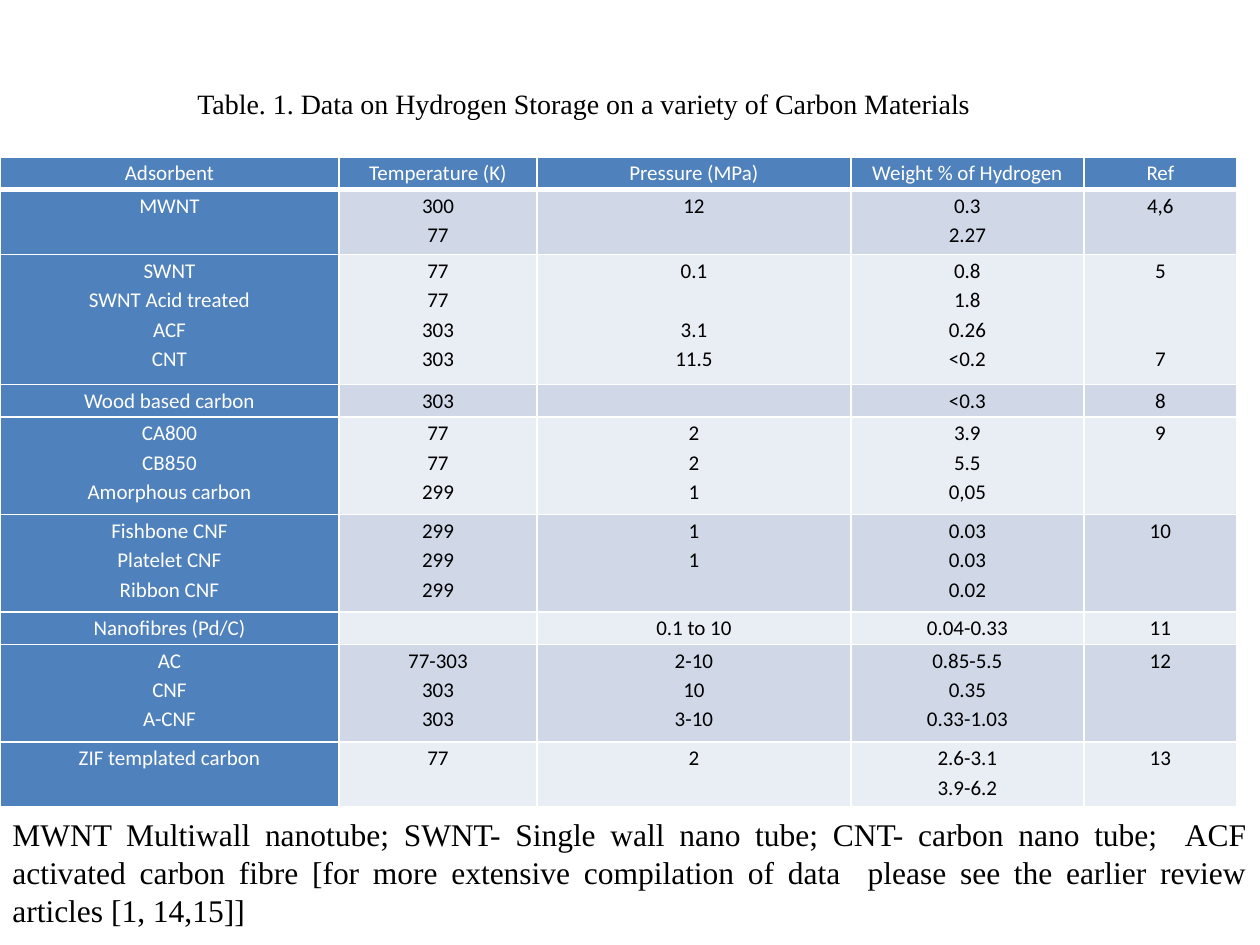
from lxml.etree import SubElement
from pptx import Presentation
from pptx.dml.color import RGBColor
from pptx.enum.text import MSO_ANCHOR as Anchor, PP_ALIGN as Align
from pptx.oxml.ns import qn
from pptx.util import Pt

EMU_PER_PX = 914400 // 126
WHITE = RGBColor(0xFF, 0xFF, 0xFF)
BLACK = RGBColor(0x00, 0x00, 0x00)
BLUE = RGBColor(0x4F, 0x81, 0xBD)
BANDS = RGBColor(0xE9, 0xED, 0xF4), RGBColor(0xD0, 0xD8, 0xE8)

# Content: each cell is a list of lines, None leaves a line free
CAPTION = "Table. 1. Data on Hydrogen Storage on a variety of Carbon Materials"
FOOTNOTE = (
    "MWNT Multiwall nanotube; SWNT- Single wall nano tube; CNT- carbon nano tube;  "
    "ACF activated carbon fibre [for more extensive compilation of data  please see "
    "the earlier review articles [1, 14,15]]"
)
HEADER = [["Adsorbent"], ["Temperature (K)"], ["Pressure (MPa)"],
          ["Weight % of Hydrogen"], ["Ref"]]
ADSORBENTS = [
    [["MWNT"], ["300", "77"], ["12"], ["0.3", "2.27"], ["4,6"]],
    [["SWNT", "SWNT Acid treated", "ACF", "CNT"], ["77", "77", "303", "303"],
     ["0.1", None, "3.1", "11.5"], ["0.8", "1.8", "0.26", "<0.2"],
     ["5", None, None, "7"]],
    [["Wood based carbon"], ["303"], [], ["<0.3"], ["8"]],
    [["CA800", "CB850", "Amorphous carbon"], ["77", "77", "299"],
     ["2", "2", "1"], ["3.9", "5.5", "0,05"], ["9"]],
    [["Fishbone CNF", "Platelet CNF", "Ribbon CNF"], ["299", "299", "299"],
     ["1", "1"], ["0.03", "0.03", "0.02"], ["10"]],
    [["Nanofibres (Pd/C)"], [], ["0.1 to 10"], ["0.04-0.33"], ["11"]],
    [["AC", "CNF", "A-CNF"], ["77-303", "303", "303"], ["2-10", "10", "3-10"],
     ["0.85-5.5", "0.35", "0.33-1.03"], ["12"]],
    [["ZIF templated carbon"], ["77"], ["2"], ["2.6-3.1", "3.9-6.2"], ["13"]],
]
ROWS = [HEADER] + ADSORBENTS
COLUMN_WIDTHS = [339, 198, 314, 233, 153]
TABLE_TOP = 157
LINE_HEIGHT = 32.5
FREE_LINE = 16.8  # points taken by one table text line


def px(length):
    return int(length * EMU_PER_PX)


def write(frame, lines, size, font, color=BLACK, align=Align.JUSTIFY, spacing=None):
    paragraph, free_lines = frame.paragraphs[0], 0
    if not lines:
        SubElement(paragraph._p, qn("a:endParaRPr"), sz=str(size * 100))
    for index, line in enumerate(lines):
        if line is None:
            free_lines += 1
            continue
        if index:
            paragraph = frame.add_paragraph()
        paragraph.alignment = align
        if spacing:
            paragraph.line_spacing = spacing
        if free_lines:
            paragraph.space_before = Pt(free_lines * FREE_LINE)
            free_lines = 0
        run = paragraph.add_run()
        run.text = line
        run.font.size = Pt(size)
        run.font.name = font
        run.font.bold = False
        run.font.color.rgb = color


def add_text(slide, box, text, size, wrap=True, anchor=Anchor.TOP):
    frame = slide.shapes.add_textbox(*map(px, box)).text_frame
    frame.word_wrap = wrap
    frame.vertical_anchor = anchor
    write(frame, [text], size, "Times New Roman")


def add_borders(cell, bottom_width):
    properties = cell._tc.get_or_add_tcPr()
    for side, width in (("L", 1), ("R", 1), ("T", 1), ("B", bottom_width)):
        border = SubElement(properties, qn(f"a:ln{side}"), w=str(Pt(width)))
        fill = SubElement(border, qn("a:solidFill"))
        SubElement(fill, qn("a:srgbClr"), val=str(WHITE))


def add_storage_table(slide):
    heights = [LINE_HEIGHT * max(map(len, row)) for row in ROWS]
    table = slide.shapes.add_table(
        len(ROWS), len(COLUMN_WIDTHS), 0, px(TABLE_TOP),
        px(sum(COLUMN_WIDTHS)), px(sum(heights))).table
    for column, width in zip(table.columns, COLUMN_WIDTHS):
        column.width = px(width)
    for r, (row, height) in enumerate(zip(ROWS, heights)):
        table.rows[r].height = px(height)
        for c, lines in enumerate(row):
            cell = table.cell(r, c)
            is_heading = r == 0 or c == 0
            cell.margin_left = cell.margin_right = px(9)
            cell.margin_top = cell.margin_bottom = 0
            add_borders(cell, bottom_width=3 if r == 0 else 1)
            cell.fill.solid()
            cell.fill.fore_color.rgb = BLUE if is_heading else BANDS[r % 2]
            write(cell.text_frame, lines, 12, "Calibri",
                  WHITE if is_heading else BLACK, Align.CENTER, 1.15)


def main():
    deck = Presentation()
    deck.slide_width, deck.slide_height = px(1260), px(945)
    slide = deck.slides.add_slide(deck.slide_layouts[6])
    add_storage_table(slide)
    # Caption above and abbreviations below the table
    add_text(slide, (185, 80, 809, 47), CAPTION, 16, wrap=False, anchor=Anchor.MIDDLE)
    add_text(slide, (0, 809, 1260, 127), FOOTNOTE, 18)
    deck.save("out.pptx")


if __name__ == "__main__":
    main()
